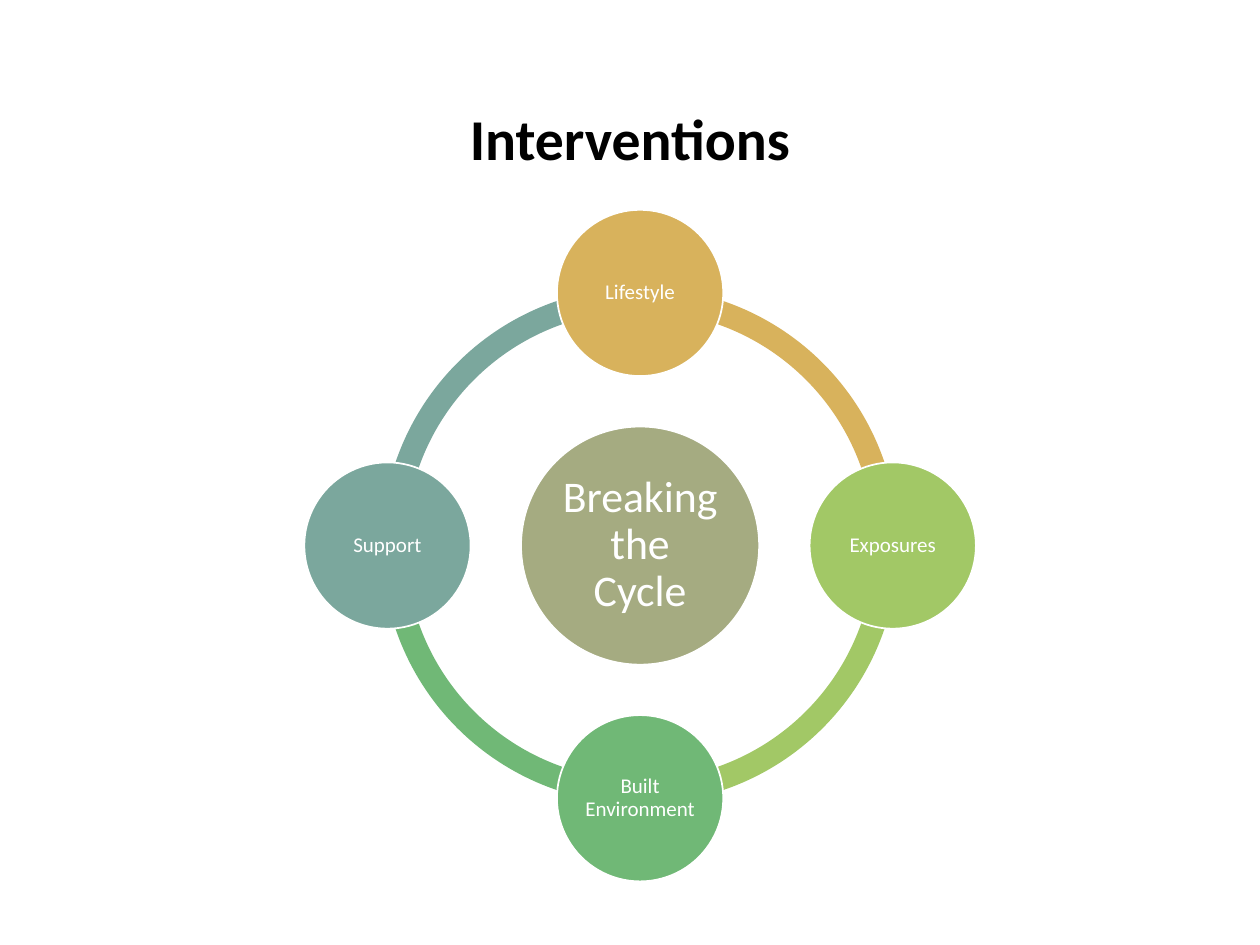
from math import cos, radians, sin

from pptx import Presentation
from pptx.dml.color import RGBColor
from pptx.enum.shapes import MSO_SHAPE
from pptx.enum.text import MSO_ANCHOR, PP_ALIGN
from pptx.util import Inches, Pt

ARC, OVAL = MSO_SHAPE.BLOCK_ARC, MSO_SHAPE.OVAL
CENTER, MIDDLE = PP_ALIGN.CENTER, MSO_ANCHOR.MIDDLE

THEME = {
    "font": "Calibri",
    "black": "000000",
    "white": "FFFFFF",
    "hub": "A5AB81",
    "gold": "D8B25C",
    "lime": "A2C866",
    "green": "70B876",
    "teal": "7BA79D",
    "title_size": 33,
    "hub_size": 25,
    "node_size": 12,
}

CENTER_X, CENTER_Y = 5.08, 4.33
ORBIT = 2.005
RING_SIZE, HUB_SIZE, NODE_SIZE = 4.1, 1.89, 1.32

NODES = [
    ("Lifestyle", "gold", 270),
    ("Exposures", "lime", 0),
    ("Built Environment", "green", 90),
    ("Support", "teal", 180),
]


def add_round(kind, x, y, size, color):
    shape = page.shapes.add_shape(
        kind, Inches(x - size / 2), Inches(y - size / 2), Inches(size), Inches(size)
    )
    shape.shadow.inherit = False
    shape.fill.solid()
    shape.fill.fore_color.rgb = RGBColor.from_string(THEME[color])
    shape.line.fill.background()
    return shape


def write_text(shape, text, size, color, inset, bold=False):
    frame = shape.text_frame
    frame.text = text
    frame.word_wrap = True
    frame.vertical_anchor = MIDDLE
    frame.margin_left = frame.margin_right = Inches(inset)
    frame.margin_top = frame.margin_bottom = Inches(inset)
    para = frame.paragraphs[0]
    para.alignment = CENTER
    para.line_spacing = 0.9
    font = para.runs[0].font
    font.name = THEME["font"]
    font.size = Pt(THEME[size])
    font.bold = bold
    font.color.rgb = RGBColor.from_string(THEME[color])


deck = Presentation()
deck.slide_width, deck.slide_height = Inches(10), Inches(7.5)
page = deck.slides.add_slide(deck.slide_layouts[5])

title = page.shapes.title
title.left, title.top = Inches(0.69), Inches(0.4)
title.width, title.height = Inches(8.62), Inches(1.45)
write_text(title, "Interventions", "title_size", "black", 0.05, bold=True)

for label, color, angle in reversed(NODES):
    arc = add_round(ARC, CENTER_X, CENTER_Y, RING_SIZE, color)
    arc.adjustments[0] = angle * 0.6
    arc.adjustments[1] = (angle + 90) % 360 * 0.6
    arc.adjustments[2] = 0.046

circles = [("Breaking the Cycle", "hub", CENTER_X, CENTER_Y, HUB_SIZE, "hub_size", 0.03)]
for label, color, angle in NODES:
    x = CENTER_X + ORBIT * cos(radians(angle))
    y = CENTER_Y + ORBIT * sin(radians(angle))
    circles.append((label, color, x, y, NODE_SIZE, "node_size", 0.02))

for label, color, x, y, size, text_size, inset in circles:
    circle = add_round(OVAL, x, y, size, color)
    circle.line.color.rgb = RGBColor.from_string(THEME["white"])
    circle.line.width = Pt(1)
    write_text(circle, label, text_size, "white", inset)

deck.save("out.pptx")
